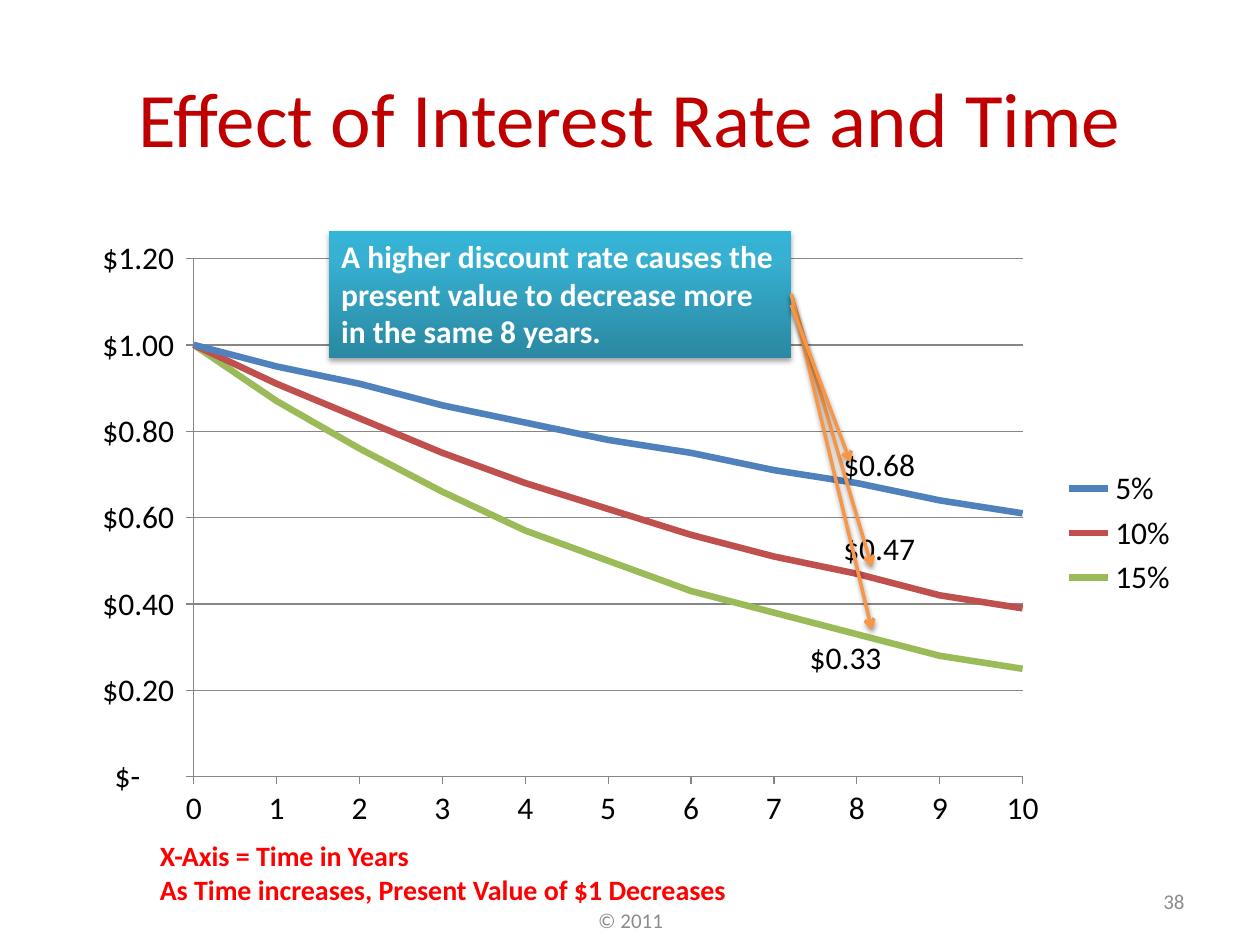
from lxml import etree
from pptx import Presentation
from pptx import util as u
from pptx.chart import data as cd
from pptx.dml import color as dc
from pptx.enum import chart as ch, shapes, text
from pptx.oxml import ns, parse_xml

W, H = 10, 7.5
FONT = "Calibri"
COLORS = {"title": "C00000", "note": "FF0000", "footer": "8C8C8C", "text": "000000",
          "white": "FFFFFF", "arrow": "F79646", "axis": "868686", "shadow": "000000"}
BOX_STOPS = [(0, "2A88A2"), (80, "37B1D2"), (100, "34B4D6")]
YEARS = range(11)
LABEL_YEAR = 8
MONEY = '_("$"* #,##0.00_);_("$"* \\(#,##0.00\\);_("$"* "-"??_);_(@_)'
ABOVE, BELOW = ch.XL_LABEL_POSITION.ABOVE, ch.XL_LABEL_POSITION.BELOW
RATES = [
    (5, "4F81BD", ABOVE, (0.02, 0.01)),
    (10, "C0504D", ABOVE, (0.02, 0)),
    (15, "9BBB59", BELOW, (-0.01, 0)),
]
PLOT = {"x": 0.11, "y": 0.05, "w": 0.74, "h": 0.85}
LEFT, CENTER, RIGHT = text.PP_ALIGN.LEFT, text.PP_ALIGN.CENTER, text.PP_ALIGN.RIGHT
TOP, MIDDLE = text.MSO_ANCHOR.TOP, text.MSO_ANCHOR.MIDDLE
TEXTS = [
    ((0.5, 0.3, 9, 1.25), ["Effect of Interest Rate and Time"], 44, "title", False, CENTER, MIDDLE, True),
    ((1.17, 6.61, 4.75, 0.64),
     ["X-Axis = Time in Years", "As Time increases, Present Value of $1 Decreases"],
     16, "note", True, LEFT, TOP, False),
    ((3.42, 7.1, 3.17, 0.4), ["© 2011"], 12, "footer", False, CENTER, MIDDLE, True),
    ((7.17, 6.95, 2.33, 0.4), ["38"], 12, "footer", False, RIGHT, MIDDLE, True),
]
CALLOUT = "A higher discount rate causes the present value to decrease more in the same 8 years."
CALLOUT_AT = (2.61, 1.83, 3.67, 1.01)
ARROWS = [((6.28, 2.34), (6.92, 4.5), True), ((6.28, 2.34), (6.92, 5), True),
          ((6.28, 2.42), (6.75, 3.67), False)]


def inches(values):
    return [u.Inches(v) for v in values]


def rgb(name):
    return dc.RGBColor.from_string(COLORS.get(name, name))


def style_font(font, size, color, bold=False):
    font.name, font.size, font.bold = FONT, u.Pt(size), bold
    font.color.rgb = rgb(color)


def write(tf, lines, size, color, bold, align, anchor, wrap):
    tf.word_wrap, tf.vertical_anchor = wrap, anchor
    for i, line in enumerate(lines):
        p = tf.add_paragraph() if i else tf.paragraphs[0]
        p.alignment = align
        r = p.add_run()
        r.text = line
        style_font(r.font, size, color, bold)


def add_shadow(sp, alpha, dist):
    sp._element.spPr.append(parse_xml(
        f'<a:effectLst {ns.nsdecls("a")}><a:outerShdw blurRad="{u.Pt(3.1)}" dist="{u.Pt(dist)}" '
        f'dir="5400000" rotWithShape="0"><a:srgbClr val="{COLORS["shadow"]}">'
        f'<a:alpha val="{alpha * 1000}"/></a:srgbClr></a:outerShdw></a:effectLst>'))


def layout(parts, inner=False):
    target = '<c:layoutTarget val="inner"/>' if inner else ""
    modes = '<c:xMode val="edge"/><c:yMode val="edge"/>' if inner else ""
    values = "".join(f'<c:{k} val="{v}"/>' for k, v in parts.items())
    return parse_xml(f'<c:layout {ns.nsdecls("c")}><c:manualLayout>{target}{modes}{values}'
                     '</c:manualLayout></c:layout>')


def add_curves(s):
    data = cd.XyChartData(number_format=MONEY)
    for rate, *_ in RATES:
        series = data.add_series(f"{rate}%")
        for year in YEARS:
            series.add_data_point(year, round((1 + rate / 100) ** -year, 2))
    chart = s.shapes.add_chart(ch.XL_CHART_TYPE.XY_SCATTER_SMOOTH_NO_MARKERS,
                               *inches((0.56, 1.81, 8.89, 4.84)), data).chart
    style_font(chart.font, 18, "text")
    chart.has_title = False
    chart.has_legend = True
    chart.legend.position = ch.XL_LEGEND_POSITION.RIGHT
    chart.legend.include_in_layout = False
    style_font(chart.legend.font, 18, "text")

    for axis, top, step, fmt in ((chart.category_axis, 10, 1, "General"),
                                 (chart.value_axis, 1.2, 0.2, MONEY)):
        axis.minimum_scale, axis.maximum_scale, axis.major_unit = 0, top, step
        axis.major_tick_mark, axis.minor_tick_mark = ch.XL_TICK_MARK.OUTSIDE, ch.XL_TICK_MARK.NONE
        axis.has_major_gridlines = axis is chart.value_axis or fmt == MONEY
        axis.tick_labels.number_format = fmt
        axis.tick_labels.number_format_is_linked = False
        style_font(axis.tick_labels.font, 18, "text")
        lines = [axis.format.line]
        if fmt == MONEY:
            lines.append(axis.major_gridlines.format.line)
        for line in lines:
            line.color.rgb, line.width = rgb("axis"), u.Pt(0.75)

    plot = chart.plots[0]
    plot.vary_by_categories = False
    for series, (_, color, position, (dx, dy)) in zip(plot.series, RATES):
        series.smooth = True
        series.marker.style = ch.XL_MARKER_STYLE.NONE
        series.format.line.color.rgb, series.format.line.width = rgb(color), u.Pt(3.75)
        label = series.points[LABEL_YEAR].data_label
        style_font(label.font, 18, "text")
        label.position = position
        idx = series._element.find(f'.//{ns.qn("c:dLbl")}/{ns.qn("c:idx")}')
        idx.addnext(layout({"x": dx, "y": dy}))

    area = chart._chartSpace.chart.plotArea
    for old in area.findall(ns.qn("c:layout")):
        area.remove(old)
    area.insert(0, layout(PLOT, inner=True))


def add_callout(s):
    box = s.shapes.add_shape(shapes.MSO_SHAPE.RECTANGLE, *inches(CALLOUT_AT))
    box.line.fill.background()
    stops = "".join(f'<a:gs pos="{pos * 1000}"><a:srgbClr val="{c}"/></a:gs>' for pos, c in BOX_STOPS)
    box._element.spPr.find(ns.qn("a:prstGeom")).addnext(parse_xml(
        f'<a:gradFill {ns.nsdecls("a")} rotWithShape="1"><a:gsLst>{stops}</a:gsLst>'
        '<a:lin ang="16200000" scaled="0"/></a:gradFill>'))
    add_shadow(box, 35, 1.8)
    write(box.text_frame, [CALLOUT], 18, "white", True, LEFT, TOP, True)
    return box


def add_arrow(s, box, start, end, joined):
    line = s.shapes.add_connector(shapes.MSO_CONNECTOR.STRAIGHT, *inches(start + end))
    if joined:
        line.begin_connect(box, 3)
    line.line.color.rgb, line.line.width = rgb("arrow"), u.Pt(2)
    etree.SubElement(line.line._get_or_add_ln(), ns.qn("a:tailEnd"), type="arrow")
    add_shadow(line, 38, 1.6)


def main():
    prs = Presentation()
    prs.slide_width, prs.slide_height = inches((W, H))
    s = prs.slides.add_slide(prs.slide_layouts[6])
    add_curves(s)
    box = add_callout(s)
    for arrow in ARROWS:
        add_arrow(s, box, *arrow)
    for at, *content in TEXTS:
        write(s.shapes.add_textbox(*inches(at)).text_frame, *content)
    prs.save("out.pptx")


if __name__ == "__main__":
    main()
